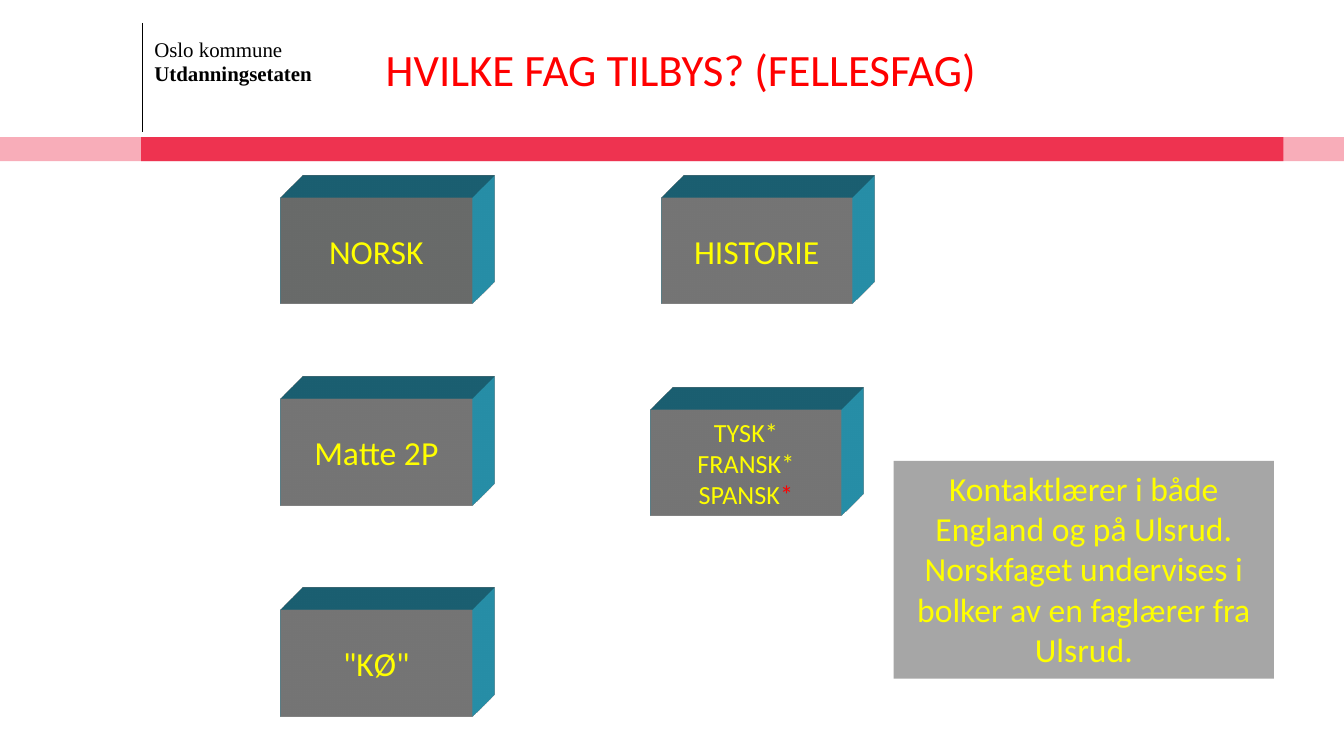
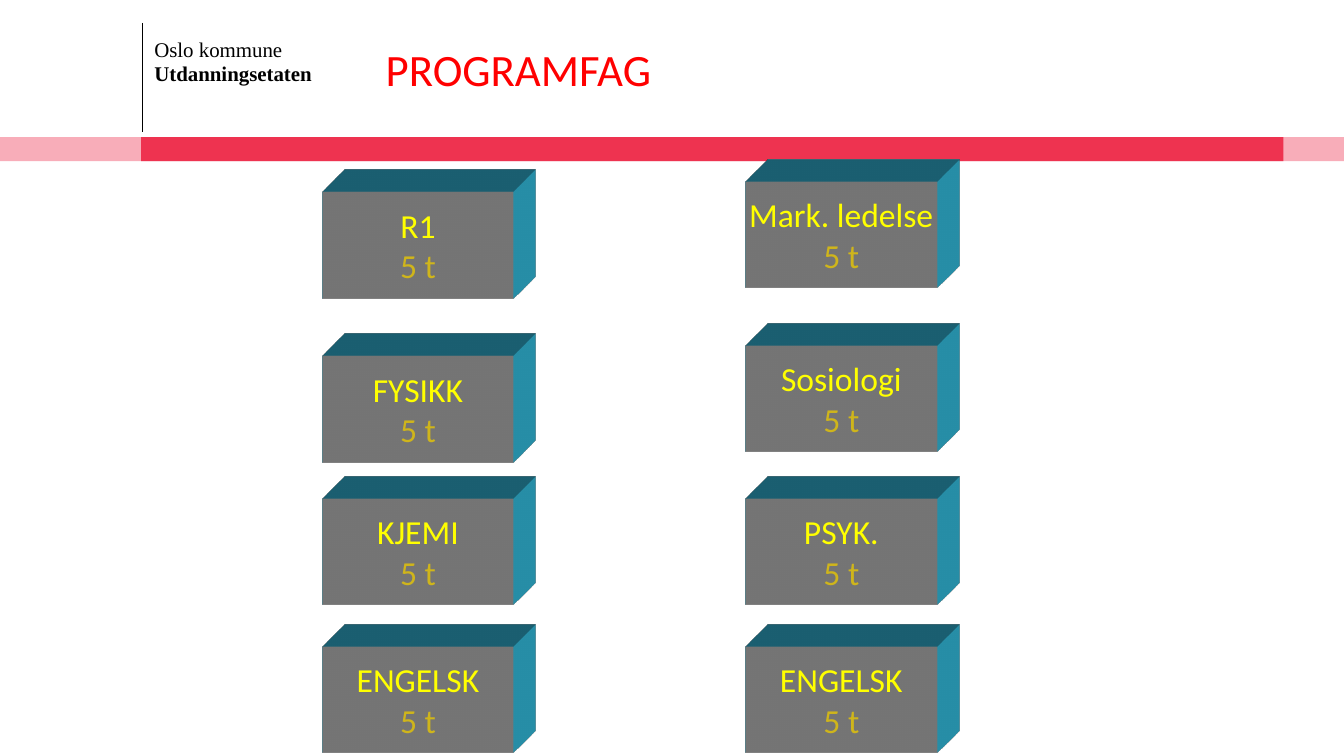
from lxml import etree
from pptx import Presentation
from pptx import util as u
from pptx.dml.color import RGBColor
from pptx.enum import shapes, text
from pptx.oxml import parse_xml
from pptx.oxml.ns import nsdecls, qn

COLORS = {
    "black": "000000", "red": "FF0000", "band": "EE3350", "band_light": "F8ADB9",
    "grey": "A6A6A6", "grey_green": "949896", "yellow": "FFFF00", "gold": "CFB51B",
    "depth": "2DA2BF",
}
COLUMNS, ROWS = 100, 56.25
CELL = u.Inches(0.1)
BLOCK_SIZE = (14.2, 7.9)
BLOCK_DEPTH = 430200

SCENE = (
    f'<a:scene3d {nsdecls("a")}><a:camera prst="legacyObliqueTopRight"/>'
    '<a:lightRig rig="legacyFlat3" dir="b"/></a:scene3d>'
)
SOLID = (
    f'<a:sp3d {nsdecls("a")} extrusionH="{BLOCK_DEPTH}" prstMaterial="legacyMatte">'
    '<a:bevelT w="13500" h="13500" prst="angle"/>'
    '<a:bevelB w="13500" h="13500" prst="angle"/>'
    f'<a:extrusionClr><a:srgbClr val="{COLORS["depth"]}"/></a:extrusionClr></a:sp3d>'
)


def cells(*lengths):
    """Turn grid columns or rows into slide lengths."""
    return [round(length * CELL) for length in lengths]


def color(name):
    return RGBColor.from_string(COLORS[name])


class Deck:
    """Holds the shared style and the current page."""

    def __init__(self):
        self.deck = Presentation()
        self.deck.slide_width, self.deck.slide_height = cells(COLUMNS, ROWS)
        self.page = None

    def add_page(self, title):
        self.page = self.deck.slides.add_slide(self.deck.slide_layouts[6])
        self.rule(10.6, 1.7, 9.8)
        self.sender()
        self.rectangle(0, 10.2, COLUMNS, 1.8, "band_light")
        self.rectangle(10.5, 10.2, 85, 1.8, "band")
        self.title(title)

    def rule(self, column, top, bottom):
        """Draw a thin vertical line."""
        line = self.page.shapes.add_connector(
            shapes.MSO_CONNECTOR.STRAIGHT, *cells(column, top, column, bottom))
        line.line.color.rgb = color("black")
        line.line.width = u.Pt(0.75)
        etree.SubElement(line._element.spPr, qn("a:effectLst"))

    def text_box(self, left, top, width, height, insets):
        box = self.page.shapes.add_textbox(*cells(left, top, width, height))
        frame = box.text_frame
        (frame.margin_left, frame.margin_top,
         frame.margin_right, frame.margin_bottom) = cells(*insets)
        return frame

    def sender(self):
        frame = self.text_box(10.5, 2.7, 20.2, 5.8, (1, 0.1, 1, 0.5))
        frame.word_wrap = False
        frame.text = "Oslo kommune\nUtdanningsetaten"
        indent = u.Inches(0.38)
        for para in frame.paragraphs:
            properties = para._p.get_or_add_pPr()
            properties.set("marL", str(indent))
            properties.set("indent", str(-indent))
            para.line_spacing = u.Pt(12.8)
            self.style(para.runs[0], 11.2, "black", "Times New Roman")
        frame.paragraphs[-1].runs[0].font.bold = True

    def title(self, words):
        frame = self.text_box(28.7, 0, 66.8, 7.1, (0, 0, 0, 0))
        frame.word_wrap = True
        frame.vertical_anchor = text.MSO_ANCHOR.BOTTOM
        frame.text = words
        self.style(frame.paragraphs[0].runs[0], 24, "red")

    def rectangle(self, left, top, width, height, fill):
        box = self.page.shapes.add_shape(
            shapes.MSO_SHAPE.RECTANGLE, *cells(left, top, width, height))
        box.shadow.inherit = False
        box.fill.solid()
        box.fill.fore_color.rgb = color(fill)
        box.line.fill.background()
        return box

    def block(self, left, top, words, size=18, fill="grey"):
        """Draw a rectangle with depth and centred text."""
        box = self.rectangle(left, top, *BLOCK_SIZE, fill)
        for part in (SCENE, SOLID):
            box._element.spPr.append(parse_xml(part))
        box.text_frame.word_wrap = False
        return self.fill_text(box, words, size)

    def note(self, left, top, width, height, words):
        box = self.rectangle(left, top, width, height, "grey")
        box.text_frame.word_wrap = True
        box.text_frame.auto_size = text.MSO_AUTO_SIZE.SHAPE_TO_FIT_TEXT
        frame = self.fill_text(box, words, 18)
        frame.vertical_anchor = text.MSO_ANCHOR.TOP

    def fill_text(self, box, words, size):
        frame = box.text_frame
        frame.text = words
        frame.vertical_anchor = text.MSO_ANCHOR.MIDDLE
        for para in frame.paragraphs:
            para.alignment = text.PP_ALIGN.CENTER
            self.style(para.runs[0], size, "yellow")
        return frame

    def style(self, span, size, name, font="Calibri"):
        span.font.name = font
        span.font.size = u.Pt(size)
        span.font.color.rgb = color(name)


def add_common_subjects(deck):
    deck.add_page("HVILKE FAG TILBYS? (FELLESFAG)")
    deck.block(20.9, 14.7, "NORSK", fill="grey_green")
    deck.block(20.9, 29.7, "Matte 2P")
    deck.block(20.9, 45.4, '"KØ"')
    languages = deck.block(48.4, 30.5, "TYSK*\nFRANSK*\nSPANSK", size=14)
    star = languages.paragraphs[-1].add_run()
    star.text = "*"
    deck.style(star, 14, "red")
    deck.block(49.2, 14.7, "HISTORIE")
    deck.note(66.5, 34.3, 28.3, 16.2,
              "Kontaktlærer i både England og på Ulsrud. Norskfaget undervises "
              "i bolker av en faglærer fra Ulsrud.")


def add_programme_subjects(deck):
    deck.add_page("PROGRAMFAG")
    columns = {
        24: {"R1": 14.3, "FYSIKK": 26.5, "KJEMI": 37.1, "ENGELSK": 48.1},
        55.5: {"Mark. ledelse": 13.5, "Sosiologi": 25.7, "PSYK.": 37.1, "ENGELSK": 48.1},
    }
    for left, subjects in columns.items():
        for subject, top in subjects.items():
            frame = deck.block(left, top, f"{subject}\n5 t")
            frame.paragraphs[1].runs[0].font.color.rgb = color("gold")


def main():
    deck = Deck()
    add_common_subjects(deck)
    add_programme_subjects(deck)
    deck.deck.save("out.pptx")


if __name__ == "__main__":
    main()
